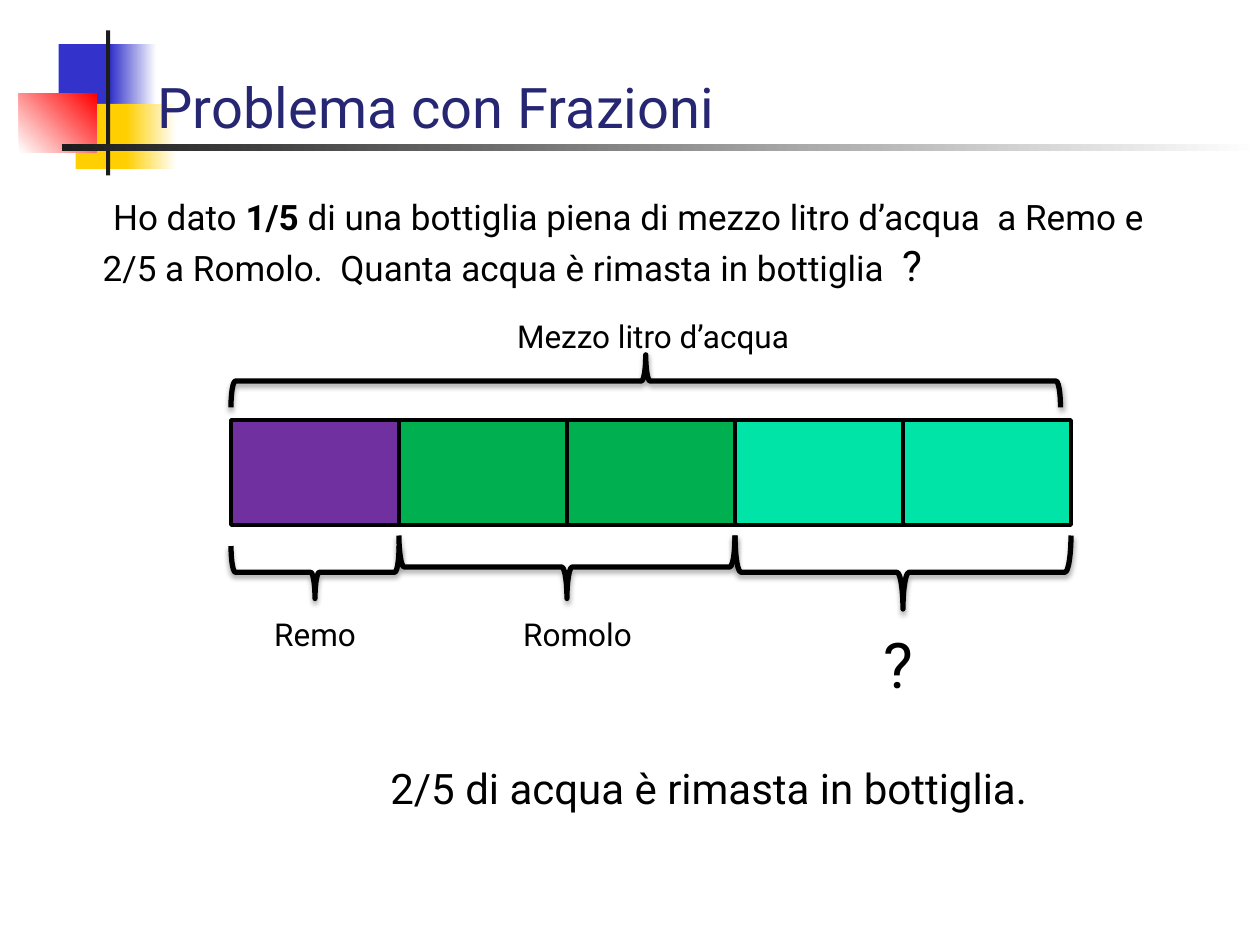
from lxml import etree
from pptx import Presentation
from pptx.dml.color import RGBColor
from pptx.enum.shapes import MSO_SHAPE as Kind
from pptx.enum.text import MSO_ANCHOR as Anchor, MSO_AUTO_SIZE as Auto, PP_ALIGN as Align
from pptx.util import Inches, Pt

FONT = "Roboto"
COLS, ROWS = 120, 90        # slide grid, 12 units to the inch
CELL, BAR = 16, 10          # one fifth of the bar: width and height
NS = "http://schemas.openxmlformats.org/drawingml/2006/main"
SHADOW = f"""<a:effectLst xmlns:a="{NS}">
<a:outerShdw blurRad="39400" dist="22900" dir="5400000" rotWithShape="0">
<a:srgbClr val="000000"><a:alpha val="35000"/></a:srgbClr>
</a:outerShdw></a:effectLst>"""


def unit(n):
    return Inches(n / 12)


def tint(code):
    return RGBColor.from_string(code)


def shape(slide, kind, x, y, w, h, fill=None, line=0):
    item = slide.shapes.add_shape(kind, *map(unit, (x, y, w, h)))
    item.shadow.inherit = False
    if fill:
        item.fill.solid()
        item.fill.fore_color.rgb = tint(fill)
    else:
        item.fill.background()
    if line:
        item.line.color.rgb = tint("000000")
        item.line.width = Pt(line)
    else:
        item.line.fill.background()
    return item


def fade(item, start, end, angle=0):
    item.fill.gradient()
    item.fill.gradient_angle = angle
    for stop, code, at in zip(item.fill.gradient_stops, (start, end), (0, 1)):
        stop.color.rgb = tint(code)
        stop.position = at


def write(frame, runs, align=Align.LEFT, color="000000"):
    """Fill a text frame with (text, size, bold) runs."""
    frame.word_wrap = True
    frame.auto_size = Auto.SHAPE_TO_FIT_TEXT
    frame.vertical_anchor = Anchor.TOP
    par = frame.paragraphs[0]
    par.alignment = align
    for text, size, bold in runs:
        run = par.add_run()
        run.text = text
        font = run.font
        font.name, font.size, font.bold = FONT, Pt(size), bold
        font.color.rgb = tint(color)


def label(slide, x, y, w, h, runs, align=Align.LEFT):
    box = slide.shapes.add_textbox(*map(unit, (x, y, w, h)))
    write(box.text_frame, runs, align)


def brace(slide, x, y, w, h, turn):
    """Lay a brace flat so that it covers the given box."""
    item = shape(slide, Kind.LEFT_BRACE, x + (w - h) / 2, y + (h - w) / 2, h, w, line=3)
    item.rotation = turn
    props = item.element.spPr
    props.replace(props.find(f"{{{NS}}}effectLst"), etree.fromstring(SHADOW))


def header(slide, x, y, w):
    """Coloured blocks, rules and the title."""
    blue, gold, red, dark, white = "3333CC", "FFCF01", "FF0000", "1C1C1C", "FFFFFF"
    parts = [
        (3.8, 1.3, 5.8, 6.2, blue, None, 0),
        (8.7, 1.3, 4.4, 6.2, blue, white, 0),
        (5.4, 7, 5.5, 6.2, gold, None, 0),
        (10.2, 7, 4.8, 6.2, gold, white, 0),
        (0, 6, 7.4, 5.6, white, red, 45),
        (8.3, 0, 0.4, 13.8, dark, None, 0),
        (4.1, 10.8, w - 4.1, 0.7, dark, white, 0),
    ]
    for dx, dy, wide, high, start, end, angle in parts:
        item = shape(slide, Kind.RECTANGLE, x + dx, y + dy, wide, high, start)
        if end:
            fade(item, start, end, angle)

    title = slide.shapes.title
    title.left, title.top, title.width, title.height = map(unit, (x + 12, y + 3.4, 79.8, 7.7))
    write(title.text_frame, [("Problema con Frazioni", 32, False)], color="262673")
    slide.shapes.element.append(title.element)  # bring to the front


def question(slide, x, y, w, h):
    label(slide, x, y, w, h, [
        (" ", 24, False),
        ("Ho dato ", 20, False),
        ("1/5 ", 20, True),
        ("di una bottiglia piena di mezzo litro d’acqua  a Remo e 2/5 a Romolo.  "
         "Quanta acqua è rimasta in bottiglia  ", 20, False),
        ("?", 24, False),
    ])


def diagram(slide, x, y):
    """Bar in fifths, with braces and names above and below."""
    fills = ["7030A0"] + ["00B050"] * 2 + ["00E4A8"] * 2
    for i, fill in enumerate(fills):
        shape(slide, Kind.RECTANGLE, x + i * CELL, y, CELL, BAR, fill, 2)

    # The whole
    brace(slide, x, y - 6.2, 79, 5, 90)
    label(slide, x + 24.7, y - 10.4, 31, 4.8, [("Mezzo litro d’acqua", 18, False)], Align.CENTER)

    # Shares: first fifth, count, brace top and height
    for first, count, top, high in ((0, 1, 12, 5), (1, 2, 11, 6), (3, 2, 11, 7)):
        brace(slide, x + first * CELL, y + top, count * CELL, high, 270)
    for dx, name in ((0, "Remo"), (25, "Romolo")):
        label(slide, x + dx, y + 18, CELL, 4.8, [(name, 18, False)], Align.CENTER)
    label(slide, x + 61, y + 19, 6, 8.5, [("?", 36, False)])


def answer(slide, x, y, w, h):
    label(slide, x, y, w, h, [("2/5 di acqua è rimasta in bottiglia.", 24, False)])


def main():
    deck = Presentation()
    deck.slide_width, deck.slide_height = unit(COLS), unit(ROWS)
    slide = deck.slides.add_slide(deck.slide_layouts[5])
    question(slide, 8.6, 17.4, 104.3, 10.9)
    diagram(slide, 22, 40)
    answer(slide, 36, 72, 66.5, 6)
    header(slide, 1.8, 2.9, COLS - 1.8)
    deck.save("out.pptx")


if __name__ == "__main__":
    main()
